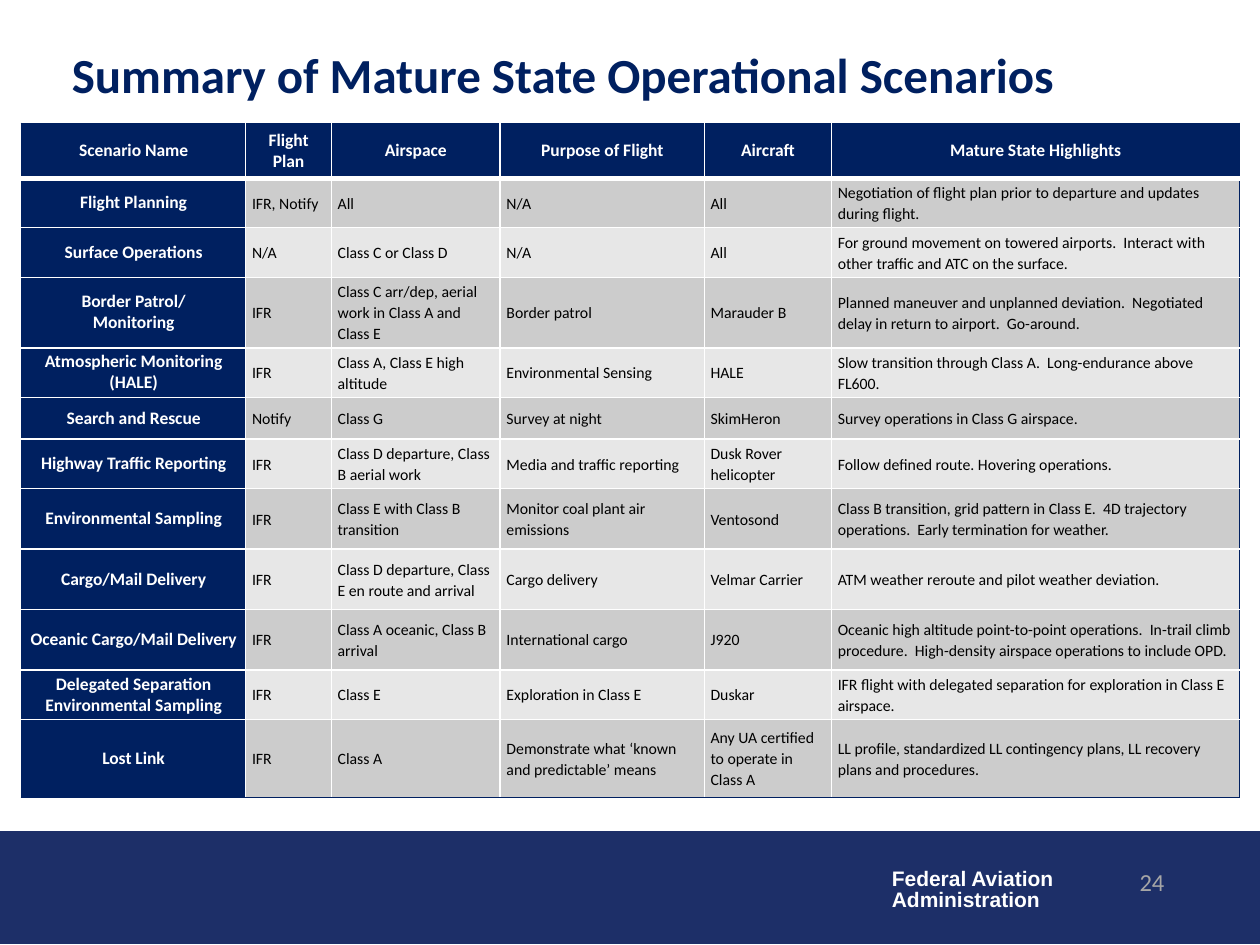
from dataclasses import dataclass

from lxml.etree import SubElement
from pptx import Presentation
from pptx.dml.color import RGBColor
from pptx.enum.shapes import MSO_SHAPE as Shape
from pptx.enum.text import MSO_ANCHOR as Anchor, PP_ALIGN as Align
from pptx.oxml.ns import qn
from pptx.util import Inches, Pt

# The page is a grid of 100 columns by 75 rows
PAGE_WIDTH, PAGE_HEIGHT = Inches(10), Inches(7.5)
COLUMN, ROW = PAGE_WIDTH / 100, PAGE_HEIGHT / 75

COLORS = {
    "navy": "002060",
    "band": "1D2F68",
    "white": "FFFFFF",
    "black": "000000",
    "number": "A6A6A6",
    "dark_row": "CCCCCC",
    "light_row": "E7E7E7",
}


@dataclass(frozen=True)
class Place:
    left: float
    top: float
    width: float
    height: float

    def lengths(self) -> tuple[int, int, int, int]:
        return (round(self.left * COLUMN), round(self.top * ROW),
                round(self.width * COLUMN), round(self.height * ROW))


@dataclass(frozen=True)
class Style:
    size: float
    color: str
    bold: bool = False
    font: str = "Calibri"
    align: Align = Align.LEFT
    spacing: float | Pt | None = None


@dataclass(frozen=True)
class Scenario:
    height: float
    name: str
    plan: str
    airspace: str
    purpose: str
    aircraft: str
    highlights: str

    def texts(self) -> tuple[str, ...]:
        return (self.name, self.plan, self.airspace, self.purpose,
                self.aircraft, self.highlights)


TITLE = Style(28, "navy", bold=True)
AGENCY = Style(12, "white", bold=True, font="Arial", spacing=0.85)
PAGE_NUMBER = Style(14, "number", align=Align.RIGHT)
HEADER = Style(10, "white", bold=True, align=Align.CENTER)
NAME = Style(10, "white", bold=True, align=Align.CENTER, spacing=Pt(12))
DETAIL = Style(9, "black", spacing=Pt(12))

COLUMN_WIDTHS = (17.8, 6.8, 13.4, 16.2, 10.1, 32.4)

# The first entry is the header row
SCENARIOS = (
    Scenario(4.3, "Scenario Name", "Flight Plan", "Airspace",
             "Purpose of Flight", "Aircraft", "Mature State Highlights"),
    Scenario(3.8, "Flight Planning", "IFR, Notify", "All", "N/A", "All",
             "Negotiation of flight plan prior to departure and updates during flight."),
    Scenario(3.8, "Surface Operations", "N/A", "Class C or Class D", "N/A", "All",
             "For ground movement on towered airports.  Interact with other "
             "traffic and ATC on the surface."),
    Scenario(5.4, "Border Patrol/\nMonitoring", "IFR",
             "Class C arr/dep, aerial work in Class A and Class E",
             "Border patrol", "Marauder B",
             "Planned maneuver and unplanned deviation.  Negotiated delay in "
             "return to airport.  Go-around."),
    Scenario(3.9, "Atmospheric Monitoring\n(HALE)", "IFR",
             "Class A, Class E high altitude", "Environmental Sensing", "HALE",
             "Slow transition through Class A.  Long-endurance above FL600."),
    Scenario(3.3, "Search and Rescue", "Notify", "Class G", "Survey at night",
             "SkimHeron", "Survey operations in Class G airspace."),
    Scenario(3.8, "Highway Traffic Reporting", "IFR",
             "Class D departure, Class B aerial work",
             "Media and traffic reporting", "Dusk Rover helicopter",
             "Follow defined route. Hovering operations."),
    Scenario(4.8, "Environmental Sampling", "IFR", "Class E with Class B transition",
             "Monitor coal plant air emissions", "Ventosond",
             "Class B transition, grid pattern in Class E.  4D trajectory "
             "operations.  Early termination for weather."),
    Scenario(4.8, "Cargo/Mail Delivery", "IFR",
             "Class D departure, Class E en route and arrival",
             "Cargo delivery", "Velmar Carrier",
             "ATM weather reroute and pilot weather deviation."),
    Scenario(4.8, "Oceanic Cargo/Mail Delivery", "IFR",
             "Class A oceanic, Class B arrival", "International cargo", "J920",
             "Oceanic high altitude point-to-point operations.  In-trail climb "
             "procedure.  High-density airspace operations to include OPD."),
    Scenario(3.9, "Delegated Separation\nEnvironmental Sampling", "IFR", "Class E",
             "Exploration in Class E", "Duskar",
             "IFR flight with delegated separation for exploration in Class E airspace."),
    Scenario(6.2, "Lost Link", "IFR", "Class A",
             "Demonstrate what ‘known and predictable’ means",
             "Any UA certified to operate in Class A",
             "LL profile, standardized LL contingency plans, LL recovery plans "
             "and procedures."),
)


def rgb(name: str) -> RGBColor:
    return RGBColor.from_string(COLORS[name])


def write(frame, text: str, style: Style) -> None:
    """Put each line of the text in its own paragraph."""
    for index, line in enumerate(text.split("\n")):
        para = frame.add_paragraph() if index else frame.paragraphs[0]
        para.alignment = style.align
        if style.spacing is not None:
            para.line_spacing = style.spacing
        span = para.add_run()
        span.text = line
        span.font.name = style.font
        span.font.size = Pt(style.size)
        span.font.bold = style.bold
        span.font.color.rgb = rgb(style.color)


def add_label(page, place: Place, text: str, style: Style, wrap: bool) -> None:
    box = page.shapes.add_textbox(*place.lengths())
    box.text_frame.word_wrap = wrap
    write(box.text_frame, text, style)


def set_borders(cell, edges: dict[str, tuple[str, float]]) -> None:
    """Border elements come before the fill, in the order L, R, T, B."""
    properties = cell._tc.get_or_add_tcPr()
    for index, side in enumerate("LRTB"):
        color, width = edges[side]
        line = SubElement(properties, qn(f"a:ln{side}"), w=str(Pt(width)))
        fill = SubElement(line, qn("a:solidFill"))
        SubElement(fill, qn("a:srgbClr"), val=COLORS[color])
        properties.insert(index, line)


def format_cell(cell, row: int, column: int, text: str) -> None:
    is_header, is_name = row == 0, column == 0
    last_row, last_column = len(SCENARIOS) - 1, len(COLUMN_WIDTHS) - 1
    cell.vertical_anchor = Anchor.MIDDLE
    cell.margin_left = cell.margin_right = Inches(0.05)
    cell.margin_top = cell.margin_bottom = Inches(0.05 if is_header else 0.03)
    cell.fill.solid()
    row_color = "dark_row" if row % 2 else "light_row"
    cell.fill.fore_color.rgb = rgb("navy" if is_header or is_name else row_color)
    write(cell.text_frame, text, HEADER if is_header else NAME if is_name else DETAIL)
    set_borders(cell, {
        "L": ("navy" if is_name else "white", 1),
        "R": ("navy" if column == last_column else "white", 1),
        "T": ("navy" if is_header else "white", 3 if row == 1 else 1),
        "B": ("navy" if row == last_row else "white", 3 if is_header else 1),
    })


def add_scenario_table(page, left: float, top: float) -> None:
    place = Place(left, top, sum(COLUMN_WIDTHS), sum(s.height for s in SCENARIOS))
    table = page.shapes.add_table(len(SCENARIOS), len(COLUMN_WIDTHS),
                                  *place.lengths()).table
    table.first_row = table.horz_banding = False
    for column, width in enumerate(COLUMN_WIDTHS):
        table.columns[column].width = round(width * COLUMN)
    for row, scenario in enumerate(SCENARIOS):
        table.rows[row].height = round(scenario.height * ROW)
        for column, text in enumerate(scenario.texts()):
            format_cell(table.cell(row, column), row, column, text)


def main() -> None:
    deck = Presentation()
    deck.slide_width, deck.slide_height = PAGE_WIDTH, PAGE_HEIGHT
    page = deck.slides.add_slide(deck.slide_layouts[5])

    # Footer band with agency name and page number
    band = page.shapes.add_shape(Shape.RECTANGLE, *Place(0, 66, 100, 8.9).lengths())
    band.shadow.inherit = False
    band.fill.solid()
    band.fill.fore_color.rgb = band.line.color.rgb = rgb("band")
    band.line.width = Pt(0.75)
    add_label(page, Place(69.8, 68.5, 15, 4.4),
              "Federal Aviation\nAdministration", AGENCY, wrap=False)
    add_label(page, Place(72.6, 68.3, 20.8, 5), "24", PAGE_NUMBER, wrap=True)

    # Title
    title = page.shapes.title
    title.left, title.top, title.width, title.height = Place(4.7, 2.5, 92.7, 6.7).lengths()
    title.text_frame.vertical_anchor = Anchor.MIDDLE
    write(title.text_frame, "Summary of Mature State Operational Scenarios", TITLE)

    # Scenario table
    add_scenario_table(page, 1.7, 9.8)

    deck.save("out.pptx")


if __name__ == "__main__":
    main()
